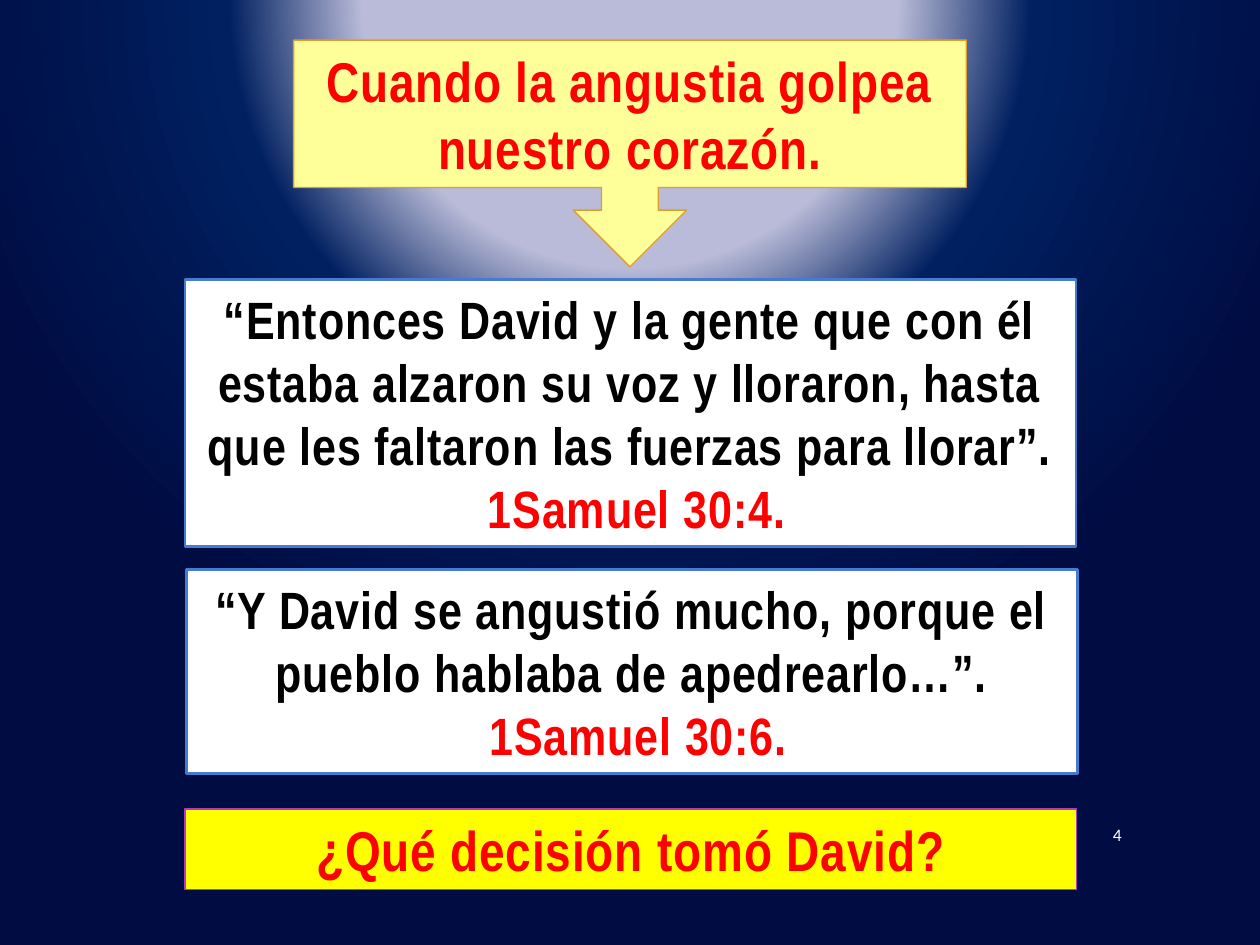
from dataclasses import dataclass

from lxml.etree import SubElement
from pptx import Presentation
from pptx.dml.color import RGBColor
from pptx.enum.shapes import MSO_SHAPE as Preset
from pptx.enum.text import MSO_ANCHOR as Anchor, MSO_AUTO_SIZE as AutoSize, PP_ALIGN as Align
from pptx.oxml import parse_xml
from pptx.oxml.ns import nsdecls, qn
from pptx.slide import Slide
from pptx.text.text import _Paragraph as Paragraph
from pptx.util import Cm, Pt

COLORS = {
    "glow": "B9BBD8", "blue": "002060", "night": "000C42",
    "red": "FF0000", "black": "000000", "white": "FFFFFF",
    "yellow": "FFFF00", "cream": "FFFF99",
    "purple": "AC3EC1", "gold": "DD9D31", "verse_border": "477BD1",
}
GLOW_STOPS = ((34, "glow"), (51, "blue"), (91, "night"))


@dataclass(frozen=True)
class Line:
    text: str
    color: str
    size: int
    outline: float


@dataclass(frozen=True)
class Panel:
    box: tuple[float, float, float, float]
    fill: str
    border: str
    border_width: float
    lines: tuple[Line, ...]
    preset: Preset = Preset.RECTANGLE
    grows: bool = True


def verse(left: float, top: float, height: float, quote: str, reference: str) -> Panel:
    lines = (Line(quote, "black", 30, 0.75), Line(f" {reference}", "red", 30, 0.75))
    return Panel((left, top, 17.96, height), "white", "verse_border", 1.5, lines)


PANELS = (
    Panel((3.73, 16.31, 17.98, 1.63), "yellow", "purple", 0.75,
          (Line("¿Qué decisión tomó David?", "red", 32, 0.25),)),
    Panel((5.92, 0.81, 13.56, 4.57), "cream", "gold", 0.75,
          (Line("Cuando la angustia golpea nuestro corazón.", "red", 32, 1.5),),
          Preset.DOWN_ARROW_CALLOUT, False),
    verse(3.73, 5.64, 5.38,
          "“Entonces David y la gente que con él estaba alzaron su voz y lloraron, "
          "hasta que les faltaron las fuerzas para llorar”.", "1Samuel 30:4."),
    verse(3.76, 11.48, 4.11,
          "“Y David se angustió mucho, porque el pueblo hablaba de apedrearlo…”.",
          "1Samuel 30:6."),
)


def rgb(name: str) -> RGBColor:
    return RGBColor.from_string(COLORS[name])


def set_background(slide: Slide) -> None:
    stops = "".join(
        f'<a:gs pos="{position * 1000}"><a:srgbClr val="{COLORS[color]}"/></a:gs>'
        for position, color in GLOW_STOPS
    )
    background = parse_xml(
        f'<p:bg {nsdecls("p", "a")}><p:bgPr><a:gradFill rotWithShape="1">'
        f'<a:gsLst>{stops}</a:gsLst><a:path path="circle">'
        '<a:fillToRect l="50000" t="-80000" r="50000" b="180000"/></a:path>'
        '</a:gradFill><a:effectLst/></p:bgPr></p:bg>'
    )
    slide.element.cSld.insert(0, background)


def set_font(paragraph: Paragraph, name: str, size: int, color: str) -> None:
    paragraph.font.name = name
    paragraph.font.size = Pt(size)
    paragraph.font.color.rgb = rgb(color)


def outline_text(paragraph: Paragraph, color: str, width: float) -> None:
    properties = paragraph._p.get_or_add_pPr().find(qn("a:defRPr"))
    properties.set("spc", "50")
    outline = parse_xml(f'<a:ln {nsdecls("a")} w="{Pt(width)}"/>')
    SubElement(SubElement(outline, qn("a:solidFill")), qn("a:srgbClr"), val=COLORS[color])
    properties.insert(0, outline)


def draw_panel(slide: Slide, panel: Panel) -> None:
    shape = slide.shapes.add_shape(panel.preset, *map(Cm, panel.box))
    shape.shadow.inherit = False
    shape.fill.solid()
    shape.fill.fore_color.rgb = rgb(panel.fill)
    shape.line.color.rgb = rgb(panel.border)
    shape.line.width = Pt(panel.border_width)
    frame = shape.text_frame
    frame.word_wrap = True
    frame.vertical_anchor = Anchor.MIDDLE
    frame.auto_size = AutoSize.SHAPE_TO_FIT_TEXT if panel.grows else AutoSize.NONE
    for index, line in enumerate(panel.lines):
        paragraph = frame.add_paragraph() if index else frame.paragraphs[0]
        paragraph.text = line.text
        paragraph.alignment = Align.CENTER
        set_font(paragraph, "Arial Narrow", line.size, line.color)
        paragraph.font.bold = True
        outline_text(paragraph, line.color, line.outline)


def draw_page_number(slide: Slide, number: str) -> None:
    frame = slide.shapes.add_textbox(Cm(21.69), Cm(16.31), Cm(1.17), Cm(1.04)).text_frame
    frame.word_wrap = True
    frame.vertical_anchor = Anchor.MIDDLE
    paragraph = frame.paragraphs[0]
    paragraph.text = number
    paragraph.alignment = Align.RIGHT
    set_font(paragraph, "Calibri", 10, "white")


def main() -> None:
    deck = Presentation()
    deck.slide_width, deck.slide_height = Cm(25.4), Cm(19.05)
    slide = deck.slides.add_slide(deck.slide_layouts[6])
    set_background(slide)
    for panel in PANELS:
        draw_panel(slide, panel)
    draw_page_number(slide, "4")
    deck.save("out.pptx")


if __name__ == "__main__":
    main()
